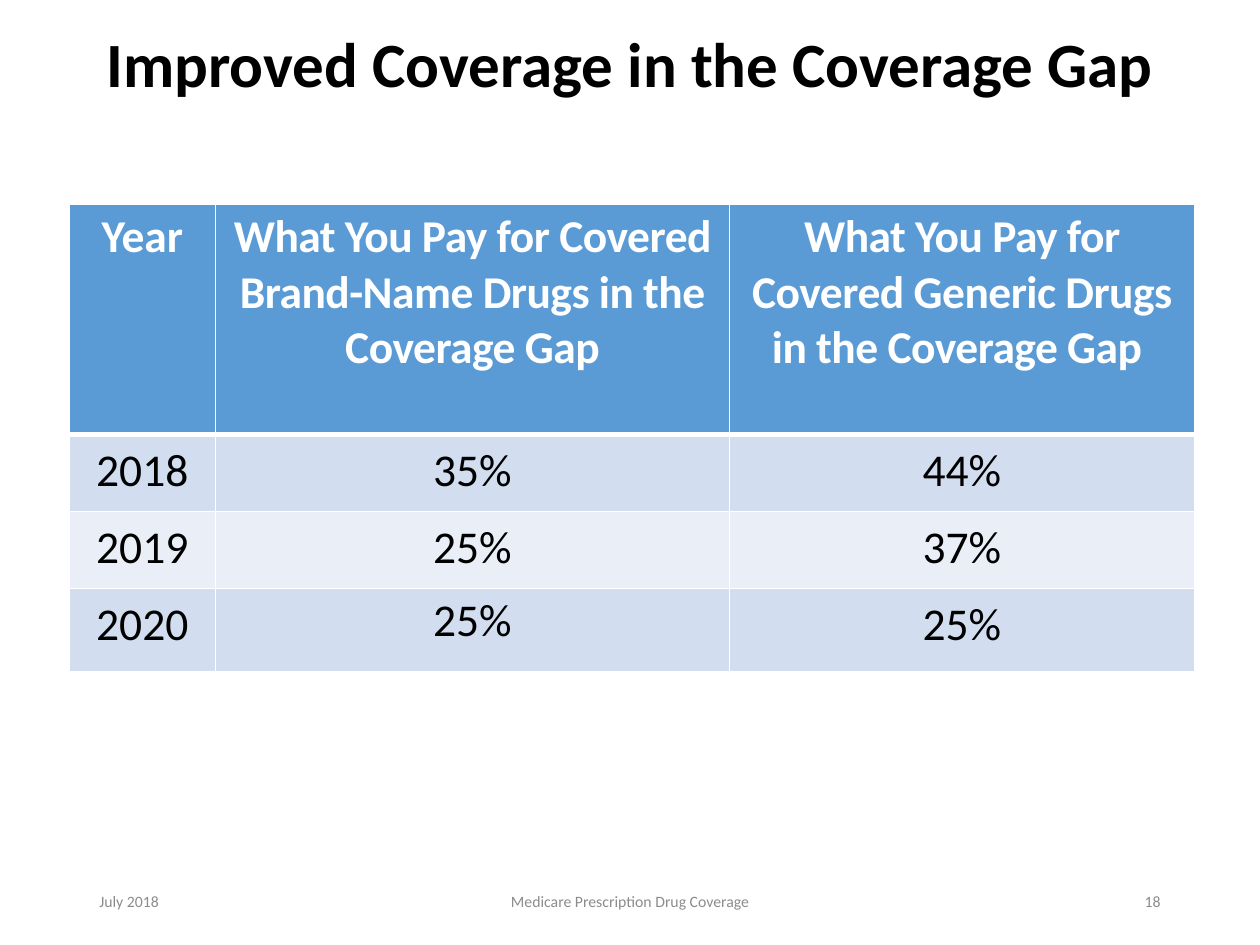
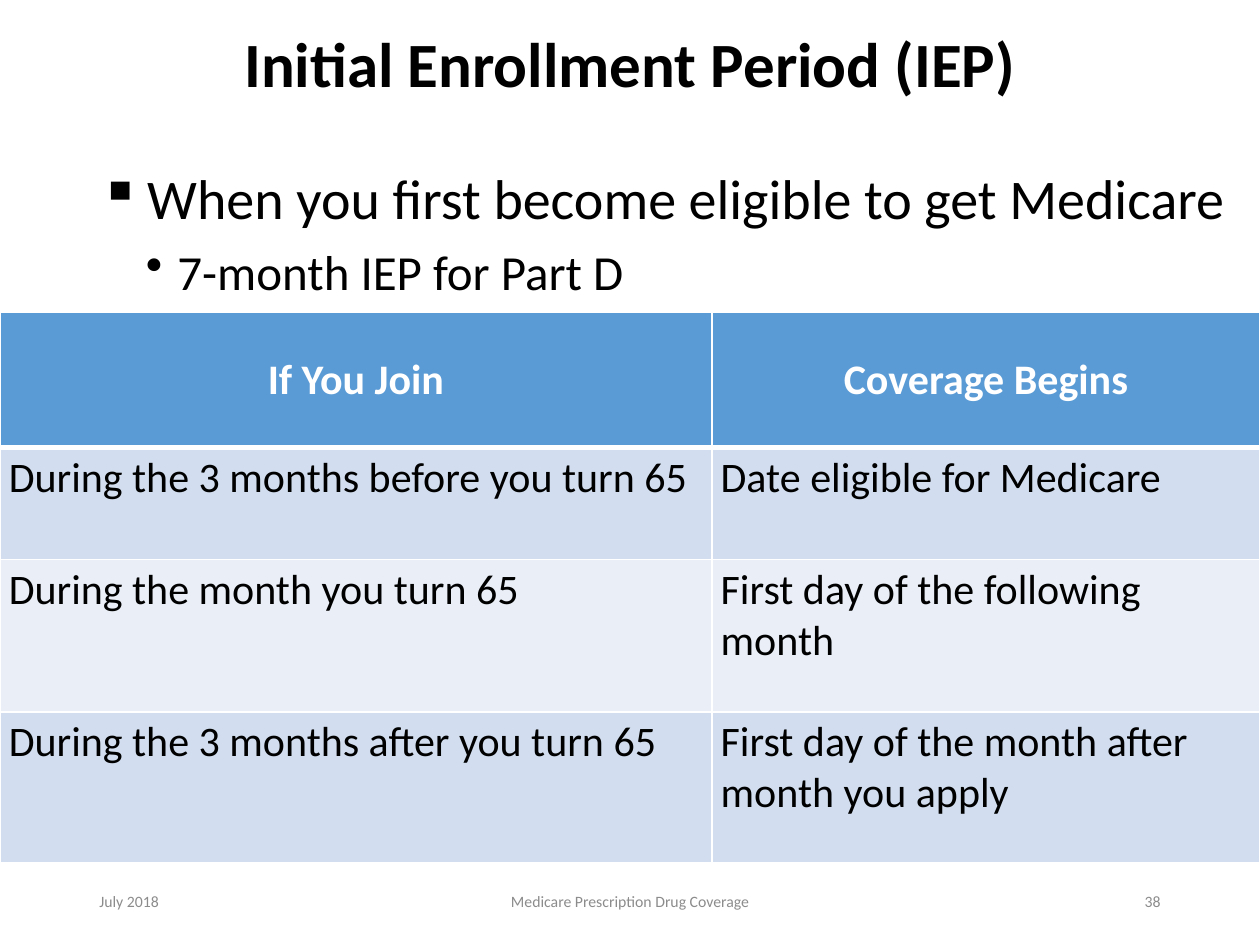
from dataclasses import dataclass
from typing import Any, NamedTuple

from lxml.etree import SubElement
from pptx import Presentation
from pptx.dml.color import RGBColor
from pptx.enum.text import MSO_ANCHOR, PP_ALIGN
from pptx.oxml.ns import qn
from pptx.util import Inches, Pt


@dataclass(frozen=True)
class Theme:
    """Colours and type sizes shared by the slides."""
    font: str = "Calibri"
    black: str = "000000"
    white: str = "FFFFFF"
    gray: str = "8C8C8C"
    header: str = "5B9BD5"
    bands: tuple[str, str] = ("D2DEEF", "EAEFF7")
    title: int = 36
    bullet: int = 32
    sub_bullet: int = 28
    footer: int = 9
    grid_line: float = 1
    header_line: float = 3


class Box(NamedTuple):
    left: float
    top: float
    width: float
    height: float


class FooterPart(NamedTuple):
    box: Box
    align: PP_ALIGN
    text: str


class Bullet(NamedTuple):
    text: str
    mark: str
    size: int
    margin: float
    hanging: float


class CellStyle(NamedTuple):
    margin_x: float
    margin_y: float
    align: PP_ALIGN
    anchor: MSO_ANCHOR = MSO_ANCHOR.TOP
    line_spacing: float = 1.0
    tracking: int = 0


@dataclass(frozen=True)
class TableSpec:
    left: float
    top: float
    columns: tuple[float, ...]
    heights: tuple[float, ...]
    size: int
    rows: tuple[tuple[str, ...], ...]
    header_style: CellStyle
    body_style: CellStyle


THEME = Theme()
TITLE_BOX = Box(0, 0.02, 10, 1.03)
BODY_BOX = Box(0.69, 1.25, 9.31, 5.53)


def set_all(target: Any, values: dict[str, Any]) -> None:
    for name, value in values.items():
        setattr(target, name, value)


def write(p: Any, text: str, size: int, color: str, bold: bool = False) -> Any:
    r = p.add_run()
    r.text = text
    set_all(r.font, {"name": THEME.font, "size": Pt(size), "bold": bold})
    r.font.color.rgb = RGBColor.from_string(color)
    return r


def add_box(s: Any, box: Box, anchor: MSO_ANCHOR) -> Any:
    tf = s.shapes.add_textbox(*map(Inches, box)).text_frame
    set_all(tf, {"word_wrap": True, "vertical_anchor": anchor})
    return tf


# Title and footer
def add_frame(prs: Any, title: str, number: int) -> Any:
    s = prs.slides.add_slide(prs.slide_layouts[6])
    p = add_box(s, TITLE_BOX, MSO_ANCHOR.MIDDLE).paragraphs[0]
    set_all(p, {"alignment": PP_ALIGN.CENTER, "line_spacing": 0.9})
    write(p, title, THEME.title, THEME.black, bold=True)
    footer = (
        FooterPart(Box(0.69, 6.95, 2.25, 0.4), PP_ALIGN.LEFT, "July 2018"),
        FooterPart(Box(3.31, 6.95, 3.38, 0.4), PP_ALIGN.CENTER,
                   "Medicare Prescription Drug Coverage"),
        FooterPart(Box(7.06, 6.95, 2.25, 0.4), PP_ALIGN.RIGHT, str(number)),
    )
    for part in footer:
        p = add_box(s, part.box, MSO_ANCHOR.MIDDLE).paragraphs[0]
        p.alignment = part.align
        write(p, part.text, THEME.footer, THEME.gray)
    return s


# Bulleted body text
def add_bullets(s: Any, bullets: tuple[Bullet, ...]) -> None:
    tf = add_box(s, BODY_BOX, MSO_ANCHOR.TOP)
    for i, bullet in enumerate(bullets):
        p = tf.add_paragraph() if i else tf.paragraphs[0]
        p.level = i
        if i:
            p.space_before = Pt(6)
        ppr = p._p.get_or_add_pPr()
        ppr.set("marL", str(Inches(bullet.margin)))
        ppr.set("indent", str(-Inches(bullet.hanging)))
        SubElement(ppr, qn("a:buChar")).set("char", bullet.mark)
        write(p, bullet.text, bullet.size, THEME.black)


# Tables
def add_borders(cell: Any, top: float, bottom: float) -> None:
    tcpr = cell._tc.get_or_add_tcPr()
    sides = {"L": THEME.grid_line, "R": THEME.grid_line, "T": top, "B": bottom}
    for side, width in sides.items():
        line = SubElement(tcpr, qn(f"a:ln{side}"))
        line.set("w", str(Pt(width)))
        fill = SubElement(line, qn("a:solidFill"))
        SubElement(fill, qn("a:srgbClr")).set("val", THEME.white)


def style_cell(cell: Any, style: CellStyle) -> None:
    x, y = Inches(style.margin_x), Inches(style.margin_y)
    set_all(cell, {"margin_left": x, "margin_right": x, "margin_top": y,
                   "margin_bottom": y, "vertical_anchor": style.anchor})
    p = cell.text_frame.paragraphs[0]
    set_all(p, {"alignment": style.align, "line_spacing": style.line_spacing})


def add_grid(s: Any, spec: TableSpec) -> Any:
    box = Box(spec.left, spec.top, sum(spec.columns), sum(spec.heights))
    table = s.shapes.add_table(len(spec.heights), len(spec.columns),
                               *map(Inches, box)).table
    for column, width in zip(table.columns, spec.columns):
        column.width = Inches(width)
    for i, (row, height, texts) in enumerate(
            zip(table.rows, spec.heights, spec.rows)):
        row.height = Inches(height)
        is_header = i == 0
        style = spec.header_style if is_header else spec.body_style
        color = THEME.white if is_header else THEME.black
        fill = THEME.header if is_header else THEME.bands[(i - 1) % 2]
        for j, (cell, text) in enumerate(zip(row.cells, texts)):
            style_cell(cell, style)
            add_borders(cell,
                        THEME.header_line if i == 1 else THEME.grid_line,
                        THEME.header_line if is_header else THEME.grid_line)
            cell.fill.solid()
            cell.fill.fore_color.rgb = RGBColor.from_string(fill)
            r = write(cell.text_frame.paragraphs[0], text, spec.size, color,
                      bold=is_header)
            if style.tracking and j:
                r._r.get_or_add_rPr().set("spc", str(style.tracking))
    return table


COVERAGE_GAP = TableSpec(
    left=0.55, top=1.62, columns=(1.16, 4.08, 3.69),
    heights=(1.83, 0.61, 0.61, 0.66), size=26,
    rows=(
        ("Year",
         "What You Pay for Covered Brand-Name Drugs in the Coverage Gap",
         "What You Pay for Covered Generic Drugs in the Coverage Gap "),
        ("2018", "35%", "44%"),
        ("2019", "25%", "37%"),
        ("2020", "25%", "25%"),
    ),
    header_style=CellStyle(0.09, 0.04, PP_ALIGN.CENTER, tracking=-30),
    body_style=CellStyle(0.07, 0, PP_ALIGN.CENTER, line_spacing=1.15),
)

ENROLLMENT = TableSpec(
    left=0, top=2.48, columns=(5.65, 4.35),
    heights=(1.07, 0.89, 1.21, 1.2), size=24,
    rows=(
        ("If You Join", "Coverage Begins"),
        ("During the 3 months before you turn 65",
         "Date eligible for Medicare"),
        ("During the month you turn 65", "First day of the following month"),
        ("During the 3 months after you turn 65",
         "First day of the month after month you apply"),
    ),
    header_style=CellStyle(0.07, 0.04, PP_ALIGN.CENTER, MSO_ANCHOR.MIDDLE),
    body_style=CellStyle(0.07, 0.04, PP_ALIGN.LEFT),
)

IEP_BULLETS = (
    Bullet("When you first become eligible to get Medicare", "▪",
           THEME.bullet, 0.38, 0.38),
    Bullet("7-month IEP for Part D", "•", THEME.sub_bullet, 0.62, 0.25),
)


def main() -> None:
    prs = Presentation()
    set_all(prs, {"slide_width": Inches(10), "slide_height": Inches(7.5)})

    # Coverage gap
    s = add_frame(prs, "Improved Coverage in the Coverage Gap", 18)
    table = add_grid(s, COVERAGE_GAP)
    style_cell(table.cell(3, 1), CellStyle(0.09, 0.04, PP_ALIGN.CENTER))

    # Initial enrollment period
    s = add_frame(prs, "Initial Enrollment Period (IEP)", 38)
    add_bullets(s, IEP_BULLETS)
    add_grid(s, ENROLLMENT)

    prs.save("out.pptx")


if __name__ == "__main__":
    main()
